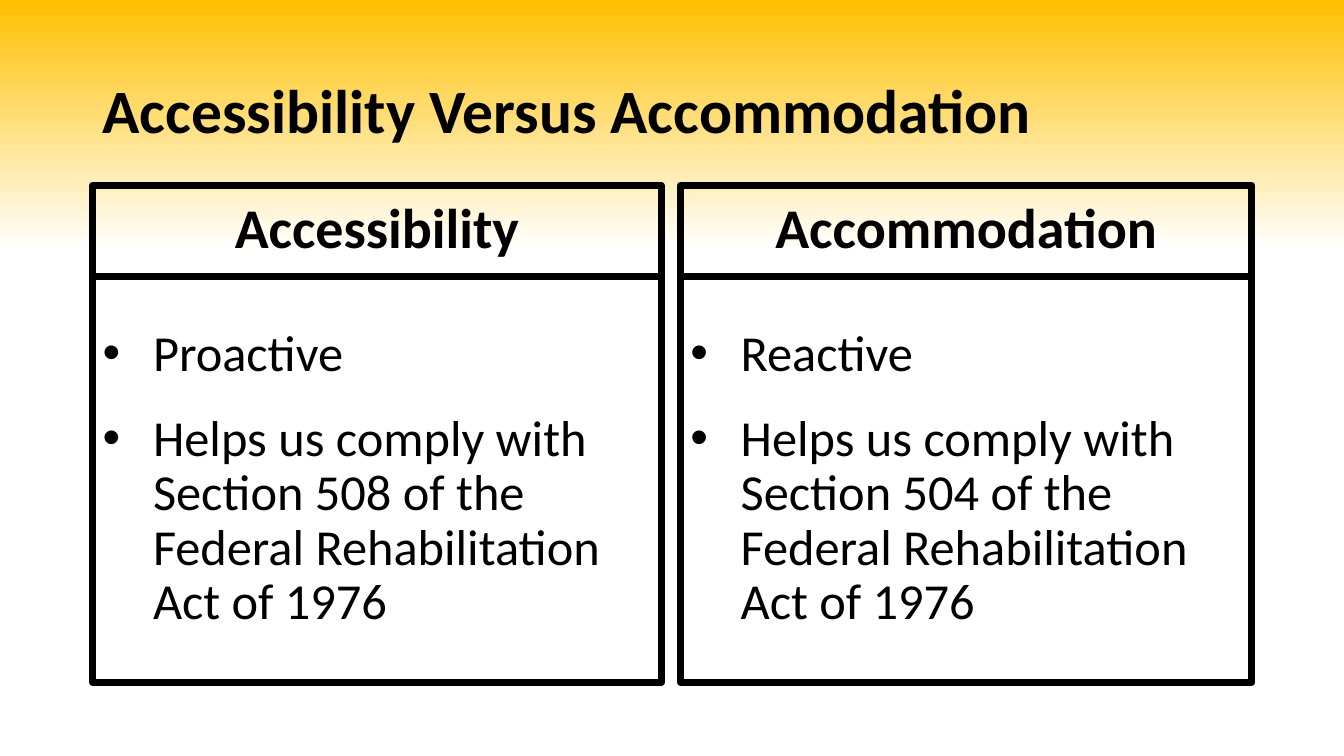
from copy import deepcopy
from dataclasses import dataclass

from lxml import etree
from pptx import Presentation
from pptx.dml.color import RGBColor
from pptx.enum.shapes import MSO_SHAPE
from pptx.enum.text import MSO_ANCHOR, PP_ALIGN
from pptx.oxml.ns import qn
from pptx.shapes.base import BaseShape
from pptx.slide import Slide
from pptx.text.text import TextFrame
from pptx.util import Pt

RECTANGLE = MSO_SHAPE.RECTANGLE
MIDDLE = MSO_ANCHOR.MIDDLE
LEFT, CENTER = PP_ALIGN.LEFT, PP_ALIGN.CENTER


@dataclass(frozen=True)
class Theme:
    font: str = "Calibri"
    ink: RGBColor = RGBColor(0x00, 0x00, 0x00)
    gold: RGBColor = RGBColor(0xFF, 0xC0, 0x00)
    white: RGBColor = RGBColor(0xFF, 0xFF, 0xFF)
    title_size: float = 44
    heading_size: float = 40
    bullet_size: float = 36
    border: float = 5


@dataclass(frozen=True)
class Column:
    left: float
    width: float
    heading: str
    points: list[str]


THEME = Theme()
SLIDE_WIDTH, SLIDE_HEIGHT = 960, 540
MARGIN = 66.24
HEADING_TOP, HEADING_HEIGHT = 132.48, 64.8
BODY_HEIGHT = 290.16
BULLET_INDENT = 36

COLUMNS = [
    Column(MARGIN, 406.08, "Accessibility", [
        "Proactive",
        "Helps us comply with Section 508 of the Federal Rehabilitation Act of 1976",
    ]),
    Column(486, 408.24, "Accommodation", [
        "Reactive",
        "Helps us comply with Section 504 of the Federal Rehabilitation Act of 1976",
    ]),
]


def paint_background(s: Slide) -> None:
    """Fade from gold at the top to white a third of the way down."""
    fill = s.background.fill
    fill.gradient()
    fill.gradient_angle = 270
    top, fade_end = fill.gradient_stops
    top.color.rgb, top.position = THEME.gold, 0
    fade_end.color.rgb, fade_end.position = THEME.white, 0.33
    stops = s.element.find(".//" + qn("a:gsLst"))
    bottom = deepcopy(stops[-1])
    bottom.set("pos", "100000")
    stops.append(bottom)


def write(tf: TextFrame, lines: list[str], size: float, bold: bool = False,
          align: PP_ALIGN = LEFT, before: float = 0, after: float = 0) -> None:
    tf.word_wrap = True
    tf.vertical_anchor = MIDDLE
    tf.text = "\n".join(lines)
    for p in tf.paragraphs:
        p.alignment = align
        p.line_spacing = 0.9
        p.space_before, p.space_after = Pt(before), Pt(after)
        for r in p.runs:
            r.font.name, r.font.size, r.font.bold = THEME.font, Pt(size), bold
            r.font.color.rgb = THEME.ink


def add_bullets(tf: TextFrame) -> None:
    for p in tf.paragraphs:
        props = p._p.get_or_add_pPr()
        props.set("marL", str(Pt(BULLET_INDENT)))
        props.set("indent", str(-Pt(BULLET_INDENT)))
        etree.SubElement(props, qn("a:buFont"), typeface="Arial")
        etree.SubElement(props, qn("a:buChar"), char="•")


def add_box(s: Slide, left: float, top: float, width: float, height: float) -> BaseShape:
    box = s.shapes.add_shape(RECTANGLE, Pt(left), Pt(top), Pt(width), Pt(height))
    box.shadow.inherit = False
    box.fill.background()
    box.line.color.rgb = THEME.ink
    box.line.width = Pt(THEME.border)
    return box


def add_column(s: Slide, column: Column) -> None:
    heading = add_box(s, column.left, HEADING_TOP, column.width, HEADING_HEIGHT)
    write(heading.text_frame, [column.heading], THEME.heading_size,
          bold=True, align=CENTER, before=10)
    body = add_box(s, column.left, HEADING_TOP + HEADING_HEIGHT, column.width, BODY_HEIGHT)
    write(body.text_frame, column.points, THEME.bullet_size, before=10, after=12)
    add_bullets(body.text_frame)


def main() -> None:
    prs = Presentation()
    prs.slide_width, prs.slide_height = Pt(SLIDE_WIDTH), Pt(SLIDE_HEIGHT)
    s = prs.slides.add_slide(prs.slide_layouts[6])
    paint_background(s)
    title = s.shapes.add_textbox(Pt(MARGIN), Pt(28.8), Pt(828), Pt(104.4))
    write(title.text_frame, ["Accessibility Versus Accommodation"],
          THEME.title_size, bold=True)
    for column in COLUMNS:
        add_column(s, column)
    prs.save("out.pptx")


if __name__ == "__main__":
    main()
